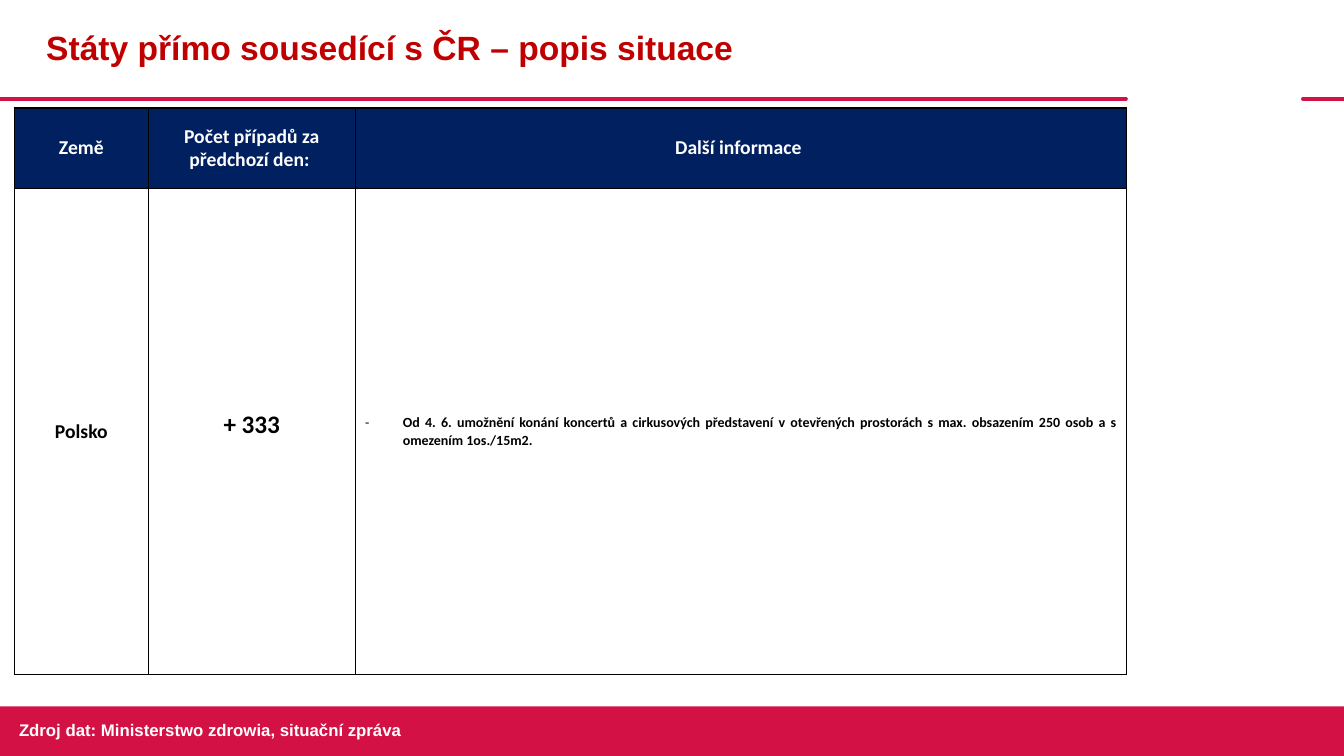
import pptx
import pptx.util
import pptx.dml.color
import pptx.enum.shapes
import pptx.enum.text
import pptx.oxml
import pptx.oxml.ns
from pptx.util import Cm, Pt

COLORS = {"crimson": "D31145", "title": "C00000", "navy": "002060",
          "white": "FFFFFF", "black": "000000"}
ALIGN = pptx.enum.text.PP_ALIGN
MIDDLE = pptx.enum.text.MSO_ANCHOR.MIDDLE
WIDTH, HEIGHT = 33.87, 19.05
TABLE_RIGHT = 28.37


def color(name):
    return pptx.dml.color.RGBColor.from_string(COLORS[name])


def add_xml(parent, body):
    tag, rest = body.split(" ", 1)
    namespace = pptx.oxml.ns.nsdecls("a")
    parent.append(pptx.oxml.parse_xml(f"<a:{tag} {namespace} {rest}"))


def write(frame, text, size=14, font="Calibri", ink="black", align=None,
          spacing=None, after=None, bullet=None, indent=0):
    """Put one bold paragraph into a text frame."""
    para = frame.paragraphs[0]
    if align is not None:
        para.alignment = align
    if spacing is not None:
        para.line_spacing = spacing
    if after is not None:
        para.space_after = after
    if bullet:
        properties = para._p.get_or_add_pPr()
        properties.set("marL", str(indent))
        properties.set("indent", str(-indent))
        # The dash stays regular and in the text font
        add_xml(properties, f'buFont typeface="{font}"/>')
        add_xml(properties, f'buChar char="{bullet}"/>')
    span = para.add_run()
    span.text = text
    span.font.size = Pt(size)
    span.font.name = font
    span.font.bold = True
    span.font.color.rgb = color(ink)


def add_header(page, left, top, width, height):
    # Title
    title = page.shapes.title
    title.left, title.top = Cm(left + 0.91), Cm(top)
    title.width, title.height = Cm(TABLE_RIGHT - 0.91), Cm(height)
    title.text_frame.vertical_anchor = MIDDLE
    title.text_frame.word_wrap = True
    write(title.text_frame, "Státy přímo sousedící s ČR – popis situace",
          size=24, font="Arial", ink="title", align=ALIGN.LEFT, spacing=0.9)
    # Broken rule under the title
    rule_y = Cm(top + height)
    for start, end in ((left, TABLE_RIGHT), (32.84, left + width)):
        rule = page.shapes.add_connector(
            pptx.enum.shapes.MSO_CONNECTOR.STRAIGHT,
            Cm(start), rule_y, Cm(end), rule_y)
        rule.line.color.rgb = color("crimson")
        rule.line.width = Pt(3)
        rule.line._get_or_add_ln().set("cap", "rnd")
        add_xml(rule._element.spPr, "effectLst />")


def add_footer(page, left, top, width, height):
    band = page.shapes.add_shape(pptx.enum.shapes.MSO_SHAPE.RECTANGLE,
                                 Cm(left), Cm(top), Cm(width), Cm(height))
    band.shadow.inherit = False
    band.fill.solid()
    band.fill.fore_color.rgb = color("crimson")
    band.line.fill.background()
    source = page.shapes.add_textbox(Cm(left + 0.23), Cm(top + 0.2),
                                     Cm(21.5), Cm(0.77))
    source.text_frame.word_wrap = True
    write(source.text_frame, "Zdroj dat: Ministerstwo zdrowia, situační zpráva",
          size=12, font="Arial", ink="white")


def format_cell(cell, fill=None):
    cell.vertical_anchor = MIDDLE
    properties = cell._tc.get_or_add_tcPr()
    for side in "LRTB":
        add_xml(properties, f'ln{side} w="{Pt(1)}"><a:solidFill><a:srgbClr '
                f'val="{COLORS["black"]}"/></a:solidFill></a:ln{side}>')
    if fill:
        cell.fill.solid()
        cell.fill.fore_color.rgb = color(fill)
    else:
        cell.fill.background()


def add_country_table(page, left, top, widths, heights):
    table = page.shapes.add_table(len(heights), len(widths), Cm(left), Cm(top),
                                  Cm(sum(widths)), Cm(sum(heights))).table
    table.horz_banding = False
    for column, width in zip(table.columns, widths):
        column.width = Cm(width)
    for row, height in zip(table.rows, heights):
        row.height = Cm(height)

    # Header row
    headings = ("Země", "Počet případů za předchozí den: ", "Další informace ")
    for index, heading in enumerate(headings):
        cell = table.cell(0, index)
        format_cell(cell, "navy")
        write(cell.text_frame, heading, ink="white", align=ALIGN.CENTER)

    # Country row
    details = (
        ("Polsko", dict(align=ALIGN.CENTER)),
        ("+ 333", dict(size=18, align=ALIGN.CENTER, spacing=Pt(12))),
        ("Od 4. 6. umožnění konání koncertů a cirkusových představení "
         "v otevřených prostorách s max. obsazením 250 osob a s omezením "
         "1os./15m2.",
         dict(size=10, align=ALIGN.JUSTIFY, spacing=1.07, after=Pt(8),
              bullet="-", indent=Cm(0.95))),
    )
    for index, (text, style) in enumerate(details):
        cell = table.cell(1, index)
        format_cell(cell)
        write(cell.text_frame, text, **style)


def main():
    deck = pptx.Presentation()
    deck.slide_width, deck.slide_height = Cm(WIDTH), Cm(HEIGHT)
    page = deck.slides.add_slide(deck.slide_layouts[5])
    add_header(page, 0, 0, WIDTH, 2.49)
    add_footer(page, 0, 17.8, WIDTH, HEIGHT - 17.8)
    add_country_table(page, 0.36, 2.72, (3.38, 5.21, 19.43), (2.03, 12.24))
    deck.save("out.pptx")


if __name__ == "__main__":
    main()
